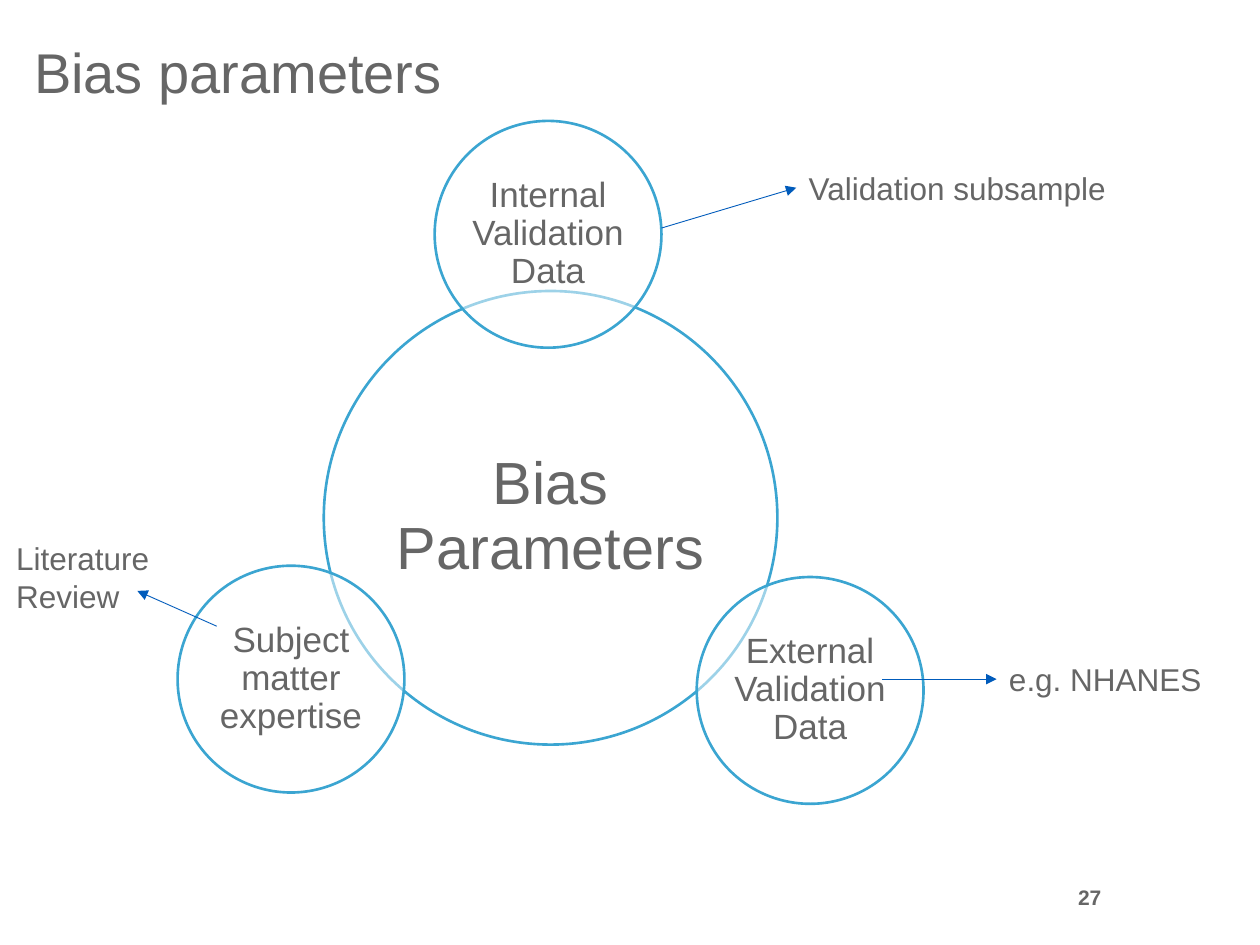
from lxml import etree
from pptx import Presentation
from pptx.dml.color import RGBColor
from pptx.enum.shapes import MSO_CONNECTOR, MSO_SHAPE
from pptx.enum.text import MSO_ANCHOR, MSO_AUTO_SIZE, PP_ALIGN
from pptx.oxml.ns import qn
from pptx.util import Inches, Pt

# Content
COLORS = {"text": "666666", "ring": "3BA5D1", "arrow": "005BBB", "paper": "FFFFFF"}
TITLE = "Bias parameters"
PAGE_NUMBER = "27"
# text, centre x, centre y, diameter, font size, inset
CIRCLES = [
    ("Bias Parameters", 4.37, 4.11, 3.6, 34, 0.05),
    ("Internal Validation Data", 4.35, 1.86, 1.8, 20, 0.03),
    ("External Validation Data", 6.43, 5.48, 1.8, 20, 0.03),
    ("Subject matter expertise", 2.31, 5.39, 1.8, 20, 0.03),
]
# text, box (left, top, width, height), arrow start, arrow end
EXAMPLES = [
    ("Validation subsample", (6.32, 1.29, 2.56, 0.4), (5.25, 1.81), (6.32, 1.49)),
    ("e.g. NHANES", (7.91, 5.19, 1.96, 0.4), (7, 5.39), (7.91, 5.39)),
    ("Literature Review", (0.03, 4.23, 1.32, 0.71), (1.72, 4.97), (1.09, 4.69)),
]


def color(name):
    return RGBColor.from_string(COLORS[name])


def write(shape, text, size, bold=False, align=PP_ALIGN.LEFT,
          anchor=MSO_ANCHOR.TOP, inset=None, line_spacing=None):
    frame = shape.text_frame
    frame.text = text
    frame_format = {"word_wrap": True, "auto_size": MSO_AUTO_SIZE.NONE,
                    "vertical_anchor": anchor}
    if inset is not None:
        for side in ("left", "top", "right", "bottom"):
            frame_format[f"margin_{side}"] = Inches(inset)
    for name, value in frame_format.items():
        setattr(frame, name, value)
    paragraph = frame.paragraphs[0]
    paragraph.alignment = align
    if line_spacing:
        paragraph.line_spacing = line_spacing
    for name, value in {"name": "Arial", "size": Pt(size), "bold": bold}.items():
        setattr(paragraph.font, name, value)
    paragraph.font.color.rgb = color("text")


def add_circle(slide, text, x, y, diameter, size, inset):
    box = (x - diameter / 2, y - diameter / 2, diameter, diameter)
    circle = slide.shapes.add_shape(MSO_SHAPE.OVAL, *map(Inches, box))
    circle.shadow.inherit = False
    circle.fill.solid()
    circle.fill.fore_color.rgb = color("paper")
    fill_color = circle.fill._xPr.find(qn("a:solidFill"))[0]
    etree.SubElement(fill_color, qn("a:alpha"), val="50000")
    circle.line.color.rgb = color("ring")
    circle.line.width = Pt(1.5)
    write(circle, text, size, align=PP_ALIGN.CENTER, anchor=MSO_ANCHOR.MIDDLE,
          inset=inset, line_spacing=0.9)


def add_arrow(slide, start, end):
    arrow = slide.shapes.add_connector(
        MSO_CONNECTOR.STRAIGHT, *map(Inches, start + end))
    arrow.line.color.rgb = color("arrow")
    arrow.line.width = Pt(0.5)
    etree.SubElement(arrow.line._get_or_add_ln(), qn("a:tailEnd"), type="triangle")
    etree.SubElement(arrow._element.spPr, qn("a:effectLst"))


def main():
    presentation = Presentation()
    presentation.slide_width, presentation.slide_height = Inches(10), Inches(7.5)
    slide = presentation.slides.add_slide(presentation.slide_layouts[5])

    # Title
    title = slide.shapes.title
    title.left, title.top, title.width, title.height = map(
        Inches, (0.17, 0.25, 5.59, 0.64))
    title.fill.solid()
    title.fill.fore_color.rgb = color("paper")
    write(title, TITLE, 32)

    # Central circle and its three sources
    for circle in CIRCLES:
        add_circle(slide, *circle)

    # Examples with arrows
    for text, box, start, end in EXAMPLES:
        add_arrow(slide, start, end)
        write(slide.shapes.add_textbox(*map(Inches, box)), text, 18)

    # Page number
    number = slide.shapes.add_textbox(*map(Inches, (8.25, 6.83, 0.59, 0.58)))
    write(number, PAGE_NUMBER, 12, bold=True, align=PP_ALIGN.RIGHT,
          anchor=MSO_ANCHOR.MIDDLE)

    presentation.save("out.pptx")


if __name__ == "__main__":
    main()
